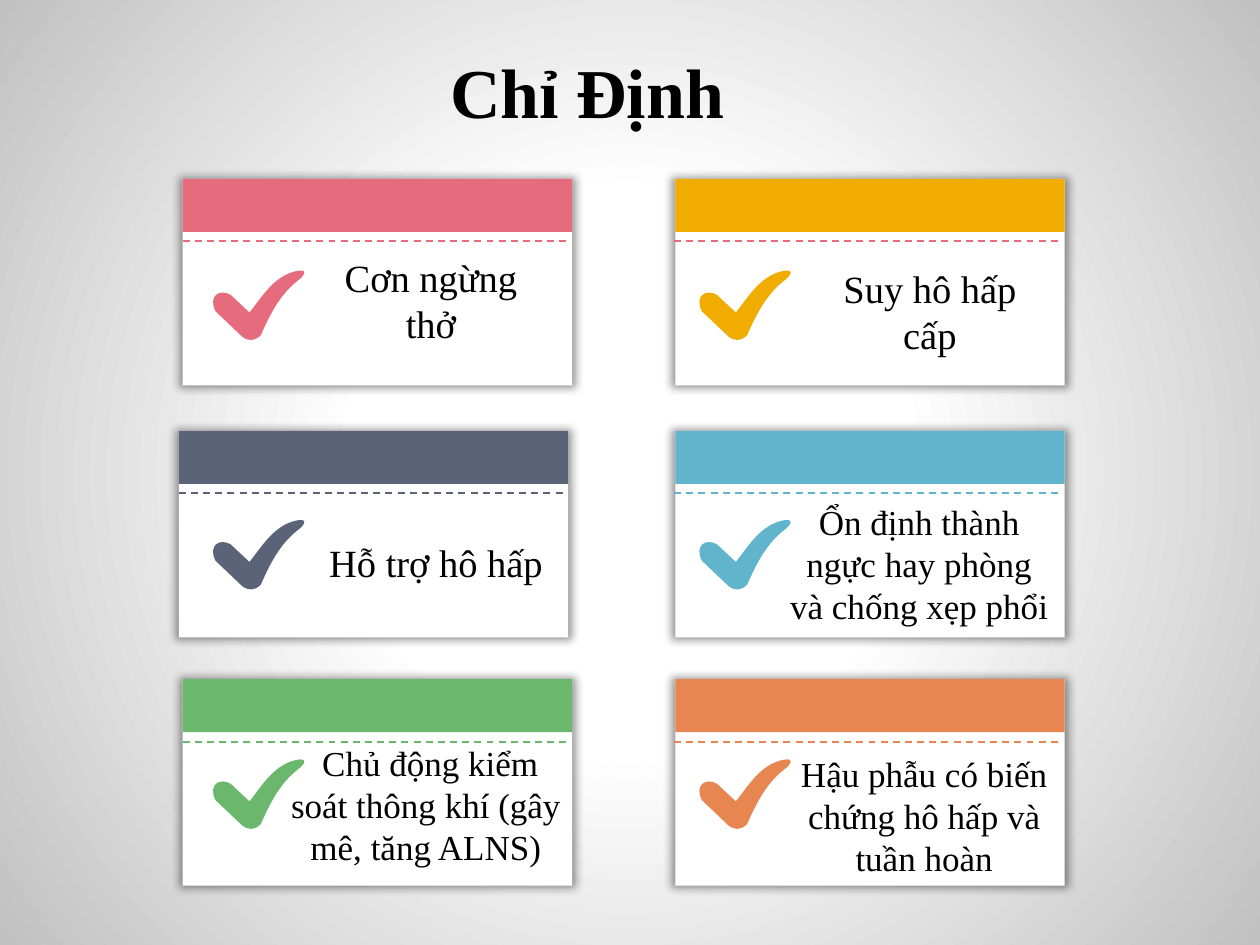
from dataclasses import dataclass

from lxml.etree import SubElement
from pptx import Presentation
from pptx.dml.color import RGBColor
from pptx.enum.dml import MSO_LINE_DASH_STYLE as Dash
from pptx.enum.shapes import MSO_CONNECTOR as Connector, MSO_SHAPE as Shape
from pptx.enum.text import MSO_ANCHOR as Anchor, MSO_AUTO_SIZE as AutoSize, PP_ALIGN as Align
from pptx.oxml.ns import qn
from pptx.util import Inches, Pt


@dataclass(frozen=True)
class Theme:
    font: str = "Times New Roman"
    title_size: int = 40
    label_size: int = 22
    small_size: int = 20
    text: str = "000000"
    paper: str = "FFFFFF"
    edge: str = "C1C1C1"
    pink: str = "E66C7D"
    yellow: str = "F0AD00"
    slate: str = "5A6378"
    blue: str = "60B5CC"
    green: str = "6BB76D"
    orange: str = "E88651"


@dataclass(frozen=True)
class Area:
    left: float
    top: float
    width: float
    height: float

    def lengths(self) -> list:
        return [Inches(v) for v in (self.left, self.top, self.width, self.height)]


@dataclass(frozen=True)
class Card:
    text: str
    column: int
    row: int
    color: str
    text_area: Area
    size: int
    dash_color: str = ""
    shift: float = 0


THEME = Theme()
CARD_WIDTH, CARD_HEIGHT, HEADER_HEIGHT = 3.09, 1.64, 0.42
CARD_LEFTS, CARD_TOPS = (1.45, 5.36), (1.42, 3.42, 5.39)
DASH_LEFTS, DASH_TOPS, DASH_WIDTH = (1.45, 5.35), (1.91, 3.91, 5.89), 3.08
TICK_LEFTS, TICK_TOPS = (1.69, 5.55), (2.15, 4.13, 6.03)
TICK_WIDTH, TICK_HEIGHT = 0.72, 0.55

# Tick outline in inches: a single point is a line, three points are a Bézier curve.
TICK_START = (0.29, 0.33)
TICK_SEGMENTS = (
    ((0.14, 0.19),),
    ((0.05, 0.14), (-0.04, 0.20), (0.02, 0.32)),
    ((0.23, 0.52),),
    ((0.28, 0.56), (0.33, 0.56), (0.38, 0.51)),
    ((0.45, 0.35), (0.53, 0.19), (0.67, 0.08)),
    ((0.74, 0.03), (0.76, -0.03), (0.63, 0.01)),
    ((0.47, 0.06), (0.38, 0.22), (0.29, 0.33)),
)

CARDS = (
    Card("Cơn ngừng thở", 0, 0, THEME.pink,
         Area(2.42, 1.96, 2, 0.84), THEME.label_size),
    Card("Suy hô hấp cấp", 1, 0, THEME.yellow,
         Area(6.42, 2.05, 1.92, 0.84), THEME.label_size, dash_color=THEME.pink),
    Card("Hỗ trợ hô hấp", 0, 1, THEME.slate,
         Area(2.5, 4.23, 1.92, 0.47), THEME.label_size, shift=-0.03),
    Card("Ổn định thành ngực hay phòng và chống xẹp phổi", 1, 1, THEME.blue,
         Area(6.17, 3.92, 2.25, 1.11), THEME.small_size),
    Card(" Chủ động kiểm soát thông khí (gây mê, tăng ALNS)", 0, 2, THEME.green,
         Area(2.17, 5.83, 2.42, 1.11), THEME.small_size),
    Card("Hậu phẫu có biến chứng hô hấp và tuần hoàn", 1, 2, THEME.orange,
         Area(6.25, 5.92, 2.17, 1.11), THEME.small_size),
)


def rgb(color: str) -> RGBColor:
    return RGBColor.from_string(color)


def paint(shape, color: str) -> None:
    shape.shadow.inherit = False
    shape.fill.solid()
    shape.fill.fore_color.rgb = rgb(color)
    shape.line.fill.background()


def paint_background(page) -> None:
    """Radial gradient that is white up to 35 % and grey at the edge."""
    fill = page.background.fill
    fill.gradient()
    stops = ((0.35, THEME.paper), (1, THEME.edge))
    for stop, (position, color) in zip(fill.gradient_stops, stops):
        stop.position = position
        stop.color.rgb = rgb(color)
    gradient = next(page._element.iter(qn("a:gradFill")))
    gradient.remove(gradient.find(qn("a:lin")))
    circle = SubElement(gradient, qn("a:path"), path="circle")
    SubElement(circle, qn("a:fillToRect"), l="50000", t="50000", r="50000", b="50000")


def add_glow_shadow(shape) -> None:
    """Soft shadow, slightly larger than the shape, on all sides."""
    effects = shape._element.spPr.find(qn("a:effectLst"))
    shadow = SubElement(effects, qn("a:outerShdw"), blurRad=str(Pt(5)), sx="102000",
                        sy="102000", algn="ctr", rotWithShape="0")
    color = SubElement(shadow, qn("a:srgbClr"), val=THEME.text)
    SubElement(color, qn("a:alpha"), val="40000")


def add_rectangle(shapes, area: Area, color: str):
    shape = shapes.add_shape(Shape.RECTANGLE, *area.lengths())
    paint(shape, color)
    return shape


def add_dashes(shapes, left: float, top: float, color: str) -> None:
    line = shapes.add_connector(Connector.STRAIGHT, Inches(left), Inches(top),
                                Inches(left + DASH_WIDTH), Inches(top))
    line.line.color.rgb = rgb(color)
    line.line.width = Pt(1)
    line.line.dash_style = Dash.DASH
    SubElement(line._element.spPr, qn("a:effectLst"))


def add_command(outline, name: str, points: tuple) -> None:
    command = SubElement(outline, qn(f"a:{name}"))
    for x, y in points:
        SubElement(command, qn("a:pt"), x=str(Inches(x)), y=str(Inches(y)))


def add_tick(shapes, left: float, top: float, color: str) -> None:
    """Freeform whose outline mixes straight lines and Bézier curves."""
    area = Area(left, top, TICK_WIDTH, TICK_HEIGHT)
    builder = shapes.build_freeform(Inches(left), Inches(top))
    builder.add_line_segments([(Inches(left + TICK_WIDTH), Inches(top + TICK_HEIGHT))])
    tick = builder.convert_to_shape()
    for name, value in zip(("left", "top", "width", "height"), area.lengths()):
        setattr(tick, name, value)
    outline = next(tick._element.iter(qn("a:path")))
    for command in list(outline):
        outline.remove(command)
    outline.set("w", str(Inches(TICK_WIDTH)))
    outline.set("h", str(Inches(TICK_HEIGHT)))
    add_command(outline, "moveTo", (TICK_START,))
    for segment in TICK_SEGMENTS:
        add_command(outline, "lnTo" if len(segment) == 1 else "cubicBezTo", segment)
    SubElement(outline, qn("a:close"))
    paint(tick, color)


def add_text(shapes, text: str, area: Area, size: int, bold: bool = False) -> None:
    box = shapes.add_textbox(*area.lengths())
    frame = box.text_frame
    frame_format = {"word_wrap": True, "vertical_anchor": Anchor.MIDDLE,
                    "auto_size": AutoSize.SHAPE_TO_FIT_TEXT}
    for name, value in frame_format.items():
        setattr(frame, name, value)
    para = frame.paragraphs[0]
    para.alignment = Align.CENTER
    span = para.add_run()
    span.text = text
    for name, value in {"name": THEME.font, "size": Pt(size), "bold": bold}.items():
        setattr(span.font, name, value)
    span.font.color.rgb = rgb(THEME.text)


def add_card(page, card: Card) -> None:
    left, top = CARD_LEFTS[card.column] + card.shift, CARD_TOPS[card.row]
    group = page.shapes.add_group_shape().shapes
    add_glow_shadow(add_rectangle(group, Area(left, top, CARD_WIDTH, CARD_HEIGHT), THEME.paper))
    add_rectangle(group, Area(left, top, CARD_WIDTH, HEADER_HEIGHT), card.color)
    add_dashes(group, DASH_LEFTS[card.column] + card.shift, DASH_TOPS[card.row],
               card.dash_color or card.color)


def main() -> None:
    deck = Presentation()
    deck.slide_width, deck.slide_height = Inches(10), Inches(7.5)
    page = deck.slides.add_slide(deck.slide_layouts[6])
    paint_background(page)
    for card in CARDS:
        add_card(page, card)
    add_text(page.shapes, "Chỉ Định", Area(0.82, 0.33, 7.68, 0.77), THEME.title_size, bold=True)
    for card in CARDS:
        add_tick(page.shapes, TICK_LEFTS[card.column], TICK_TOPS[card.row], card.color)
    for card in sorted(CARDS, key=lambda item: item.column):
        add_text(page.shapes, card.text, card.text_area, card.size)
    deck.save("out.pptx")


if __name__ == "__main__":
    main()
